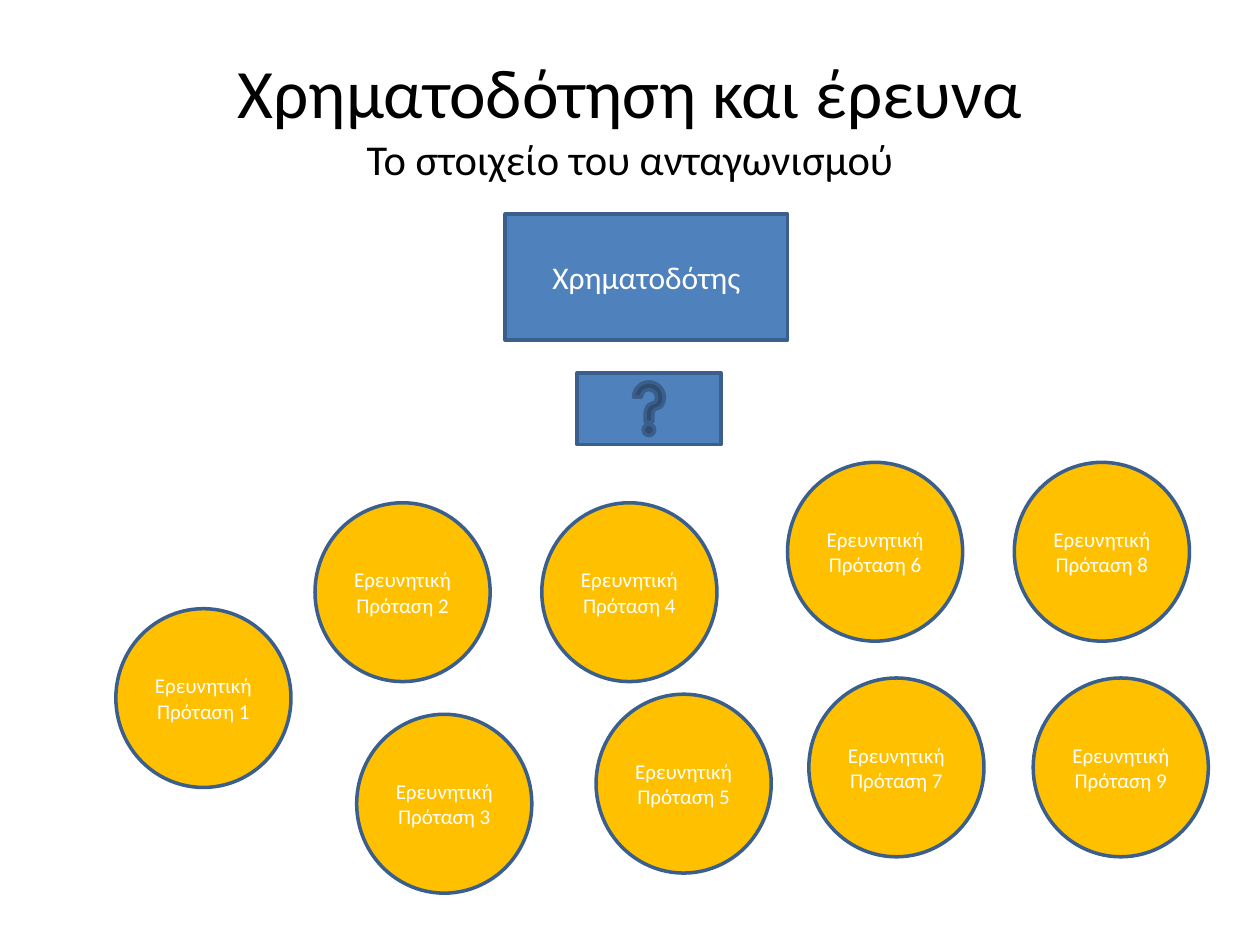
from dataclasses import dataclass

from pptx import Presentation
from pptx.dml.color import RGBColor
from pptx.enum.shapes import MSO_SHAPE as Preset
from pptx.enum.text import MSO_ANCHOR as Anchor, PP_ALIGN as Align
from pptx.util import Pt


@dataclass(frozen=True)
class Theme:
    font: str = "Calibri"
    ink: RGBColor = RGBColor(0x00, 0x00, 0x00)
    white: RGBColor = RGBColor(0xFF, 0xFF, 0xFF)
    blue: RGBColor = RGBColor(0x4F, 0x81, 0xBD)
    gold: RGBColor = RGBColor(0xFF, 0xC0, 0x00)
    outline: RGBColor = RGBColor(0x3A, 0x5F, 0x8C)
    outline_width: float = 2
    title_size: float = 39.6
    subtitle_size: float = 24.3
    funder_size: float = 18
    proposal_size: float = 12


@dataclass(frozen=True)
class Node:
    preset: Preset
    left: float
    top: float
    width: float
    height: float
    fill: RGBColor
    text: str = ""
    size: float = 18


THEME = Theme()
CIRCLE_WIDTH, CIRCLE_HEIGHT = 100.1, 102.2
# Left and top of each proposal, in order of its number
PROPOSAL_SPOTS = [
    (66.2, 347.8),
    (180, 287.3), (203.8, 408.2),
    (309.6, 287.3), (340.6, 396.7),
    (450, 264.2), (462.2, 387.4),
    (579.6, 264.2), (590.4, 387.4),
]


def style_para(para, size: float, color: RGBColor) -> None:
    para.alignment = Align.CENTER
    para.font.name = THEME.font
    para.font.size = Pt(size)
    para.font.color.rgb = color


def draw_title(page, title: str, subtitle: str) -> None:
    box = page.shapes.add_textbox(Pt(36), Pt(21.6), Pt(648), Pt(90))
    frame = box.text_frame
    frame.word_wrap = True
    frame.vertical_anchor = Anchor.MIDDLE
    para = frame.paragraphs[0]
    para.add_run().text = title
    para.add_line_break()
    span = para.add_run()
    span.text = subtitle
    style_para(para, THEME.title_size, THEME.ink)
    span.font.size = Pt(THEME.subtitle_size)


def draw_node(page, node: Node) -> None:
    shape = page.shapes.add_shape(
        node.preset, Pt(node.left), Pt(node.top), Pt(node.width), Pt(node.height))
    shape.shadow.inherit = False
    shape.fill.solid()
    shape.fill.fore_color.rgb = node.fill
    shape.line.color.rgb = THEME.outline
    shape.line.width = Pt(THEME.outline_width)
    if node.text:
        frame = shape.text_frame
        frame.word_wrap = True
        frame.vertical_anchor = Anchor.MIDDLE
        para = frame.paragraphs[0]
        para.text = node.text
        style_para(para, node.size, THEME.white)


def main() -> None:
    deck = Presentation()
    deck.slide_width, deck.slide_height = Pt(720), Pt(540)
    page = deck.slides.add_slide(deck.slide_layouts[6])

    draw_title(page, "Χρηματοδότηση και έρευνα", "Το στοιχείο του ανταγωνισμού")
    draw_node(page, Node(Preset.RECTANGLE, 288.7, 122.4, 161.3, 72,
                         THEME.blue, "Χρηματοδότης", THEME.funder_size))
    for number, (left, top) in enumerate(PROPOSAL_SPOTS, start=1):
        draw_node(page, Node(Preset.OVAL, left, top, CIRCLE_WIDTH, CIRCLE_HEIGHT,
                             THEME.gold, f"Ερευνητική Πρόταση {number}",
                             THEME.proposal_size))
    draw_node(page, Node(Preset.ACTION_BUTTON_HELP, 329.8, 213.1, 82.1, 41, THEME.blue))

    deck.save("out.pptx")


if __name__ == "__main__":
    main()
